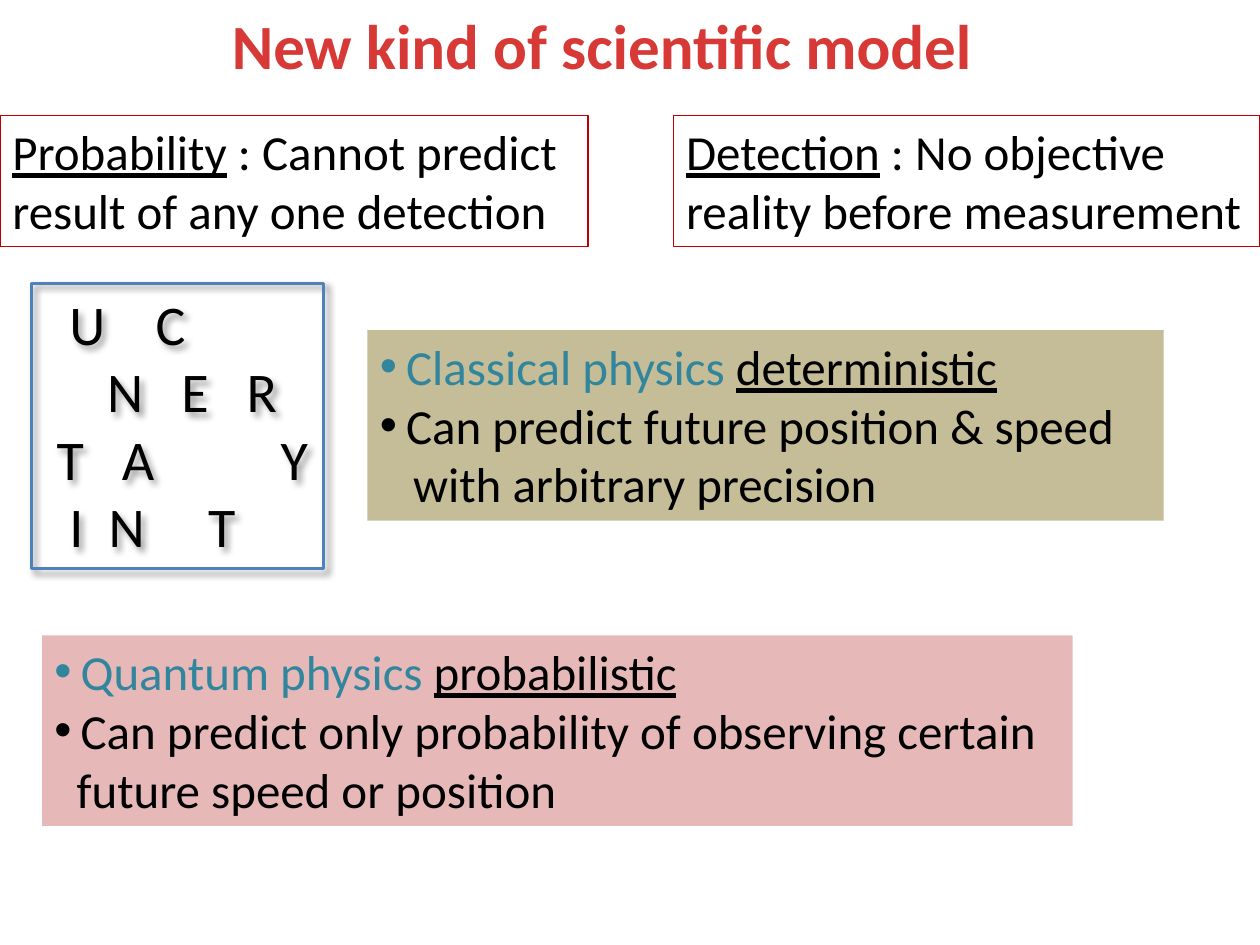
"""Build the slide on probability and detection in quantum physics."""
from dataclasses import dataclass
from typing import Optional

from lxml.etree import SubElement
from pptx import Presentation
from pptx.dml.color import RGBColor
from pptx.enum.shapes import MSO_SHAPE as Preset
from pptx.enum.text import MSO_ANCHOR as Anchor, PP_ALIGN as Align
from pptx.oxml.ns import qn
from pptx.util import Pt

COLORS = {
    "black": "000000", "title": "D73A36", "border": "C00000", "frame": "4F81BD",
    "accent": "31859C", "tan": "C4BD97", "rose": "E6B9B8",
}


@dataclass(frozen=True)
class Box:
    left: float
    top: float
    width: float
    height: float
    fill: Optional[str] = None
    line: Optional[str] = None
    line_width: float = 0.75


@dataclass(frozen=True)
class Panel:
    box: Box
    subject: str
    quality: str
    prediction: str
    continuation: str
    continuation_indent: float


@dataclass(frozen=True)
class Claim:
    box: Box
    term: str
    lines: tuple[str, ...]


@dataclass(frozen=True)
class LetterRow:
    letters: str
    stops: tuple[float, ...]


TITLE = Box(120, 0, 448, 51)
LETTER_BOX = Box(18, 162, 167, 163, line="frame", line_width=2)
LETTER_ROWS = (
    LetterRow("UC", (14.5, 63.9)),
    LetterRow("NER", (36.2, 78.5, 115.8)),
    LetterRow("TAY", (7.2, 44.5, 135.3)),
    LetterRow("INT", (14.5, 37, 93.8)),
)
PANELS = (
    Panel(Box(210, 188.6, 455, 109, fill="tan"), "Classical physics ", "deterministic",
          "Can predict future position & speed", "with arbitrary precision", 19),
    Panel(Box(24, 363, 589, 109, fill="rose"), "Quantum physics ", "probabilistic",
          "Can predict only probability of observing certain",
          "future speed or position", 12.7),
)
CLAIMS = (
    Claim(Box(0, 66, 336, 75, line="border"), "Probability",
          (" : Cannot predict result of any one detection",)),
    Claim(Box(385, 66, 335, 75, line="border"), "Detection",
          (" : No objective", "reality before measurement")),
)


def rgb(name: str) -> RGBColor:
    """Return the named colour."""
    return RGBColor.from_string(COLORS[name])


def draw_box(slide, box: Box):
    """Draw a rectangle and return it ready for text."""
    shape = slide.shapes.add_shape(
        Preset.RECTANGLE, Pt(box.left), Pt(box.top), Pt(box.width), Pt(box.height))
    shape.shadow.inherit = False
    if box.fill:
        shape.fill.solid()
        shape.fill.fore_color.rgb = rgb(box.fill)
    else:
        shape.fill.background()
    if box.line:
        shape.line.color.rgb = rgb(box.line)
        shape.line.width = Pt(box.line_width)
    else:
        shape.line.fill.background()
    shape.text_frame.word_wrap = True
    shape.text_frame.vertical_anchor = Anchor.TOP
    return shape


def next_paragraph(frame, align=Align.LEFT):
    """Return the empty first paragraph or a new one."""
    first = frame.paragraphs[0]
    paragraph = frame.add_paragraph() if first.runs else first
    paragraph.alignment = align
    return paragraph


def write(paragraph, text: str, *, size: float = 28, color: str = "black",
          bold: bool = False, underline: bool = False) -> None:
    """Add a formatted run to the paragraph."""
    run = paragraph.add_run()
    run.text = text
    run.font.name = "Calibri"
    run.font.size = Pt(size)
    run.font.bold = bold
    run.font.underline = underline
    run.font.color.rgb = rgb(color)


def set_indent(paragraph, margin: float, bullet: bool = False) -> None:
    """Indent the paragraph, hanging it from a bullet if wanted."""
    properties = paragraph._p.get_or_add_pPr()
    properties.set("marL", str(Pt(margin)))
    properties.set("indent", str(-Pt(margin) if bullet else 0))
    if bullet:
        SubElement(properties, qn("a:buFont"), typeface="Arial")
        SubElement(properties, qn("a:buChar"), char="•")


def add_shadow(shape) -> None:
    """Give the shape a soft shadow to the lower right."""
    effects = shape._element.spPr.find(qn("a:effectLst"))
    shadow = SubElement(effects, qn("a:outerShdw"), blurRad=str(Pt(4)), dist=str(Pt(3)),
                        dir="2700000", algn="tl", rotWithShape="0")
    color = SubElement(shadow, qn("a:srgbClr"), val=COLORS["black"])
    SubElement(color, qn("a:alpha"), val="40000")


def draw_title(slide, box: Box, text: str) -> None:
    """Draw the centred title."""
    shape = slide.shapes.add_textbox(
        Pt(box.left), Pt(box.top), Pt(box.width), Pt(box.height))
    shape.text_frame.word_wrap = True
    write(next_paragraph(shape.text_frame, Align.CENTER), text,
          size=36, color="title", bold=True)


def draw_letters(slide, box: Box, rows: tuple[LetterRow, ...]) -> None:
    """Draw the scattered letters, each at its own tab stop."""
    shape = draw_box(slide, box)
    add_shadow(shape)
    for row in rows:
        paragraph = next_paragraph(shape.text_frame)
        tabs = SubElement(paragraph._p.get_or_add_pPr(), qn("a:tabLst"))
        for stop in row.stops:
            SubElement(tabs, qn("a:tab"), pos=str(Pt(stop)), algn="l")
        write(paragraph, "".join(f"\t{letter}" for letter in row.letters), size=32)


def draw_panel(slide, panel: Panel) -> None:
    """Draw a filled panel with two bullets and a continuation line."""
    frame = draw_box(slide, panel.box).text_frame
    heading = next_paragraph(frame)
    set_indent(heading, 15, bullet=True)
    write(heading, panel.subject, color="accent")
    write(heading, panel.quality, underline=True)
    prediction = next_paragraph(frame)
    set_indent(prediction, 15, bullet=True)
    write(prediction, panel.prediction)
    continuation = next_paragraph(frame)
    set_indent(continuation, panel.continuation_indent)
    write(continuation, panel.continuation)


def draw_claim(slide, claim: Claim) -> None:
    """Draw an outlined claim that opens with an underlined term."""
    frame = draw_box(slide, claim.box).text_frame
    write(next_paragraph(frame), claim.term, underline=True)
    write(frame.paragraphs[0], claim.lines[0])
    for line in claim.lines[1:]:
        write(next_paragraph(frame), line)


def main() -> None:
    """Build and save the presentation."""
    presentation = Presentation()
    presentation.slide_width, presentation.slide_height = Pt(720), Pt(540)
    slide = presentation.slides.add_slide(presentation.slide_layouts[6])
    draw_letters(slide, LETTER_BOX, LETTER_ROWS)
    for panel in PANELS:
        draw_panel(slide, panel)
    draw_title(slide, TITLE, "New kind of scientific model")
    for claim in CLAIMS:
        draw_claim(slide, claim)
    presentation.save("out.pptx")


if __name__ == "__main__":
    main()
